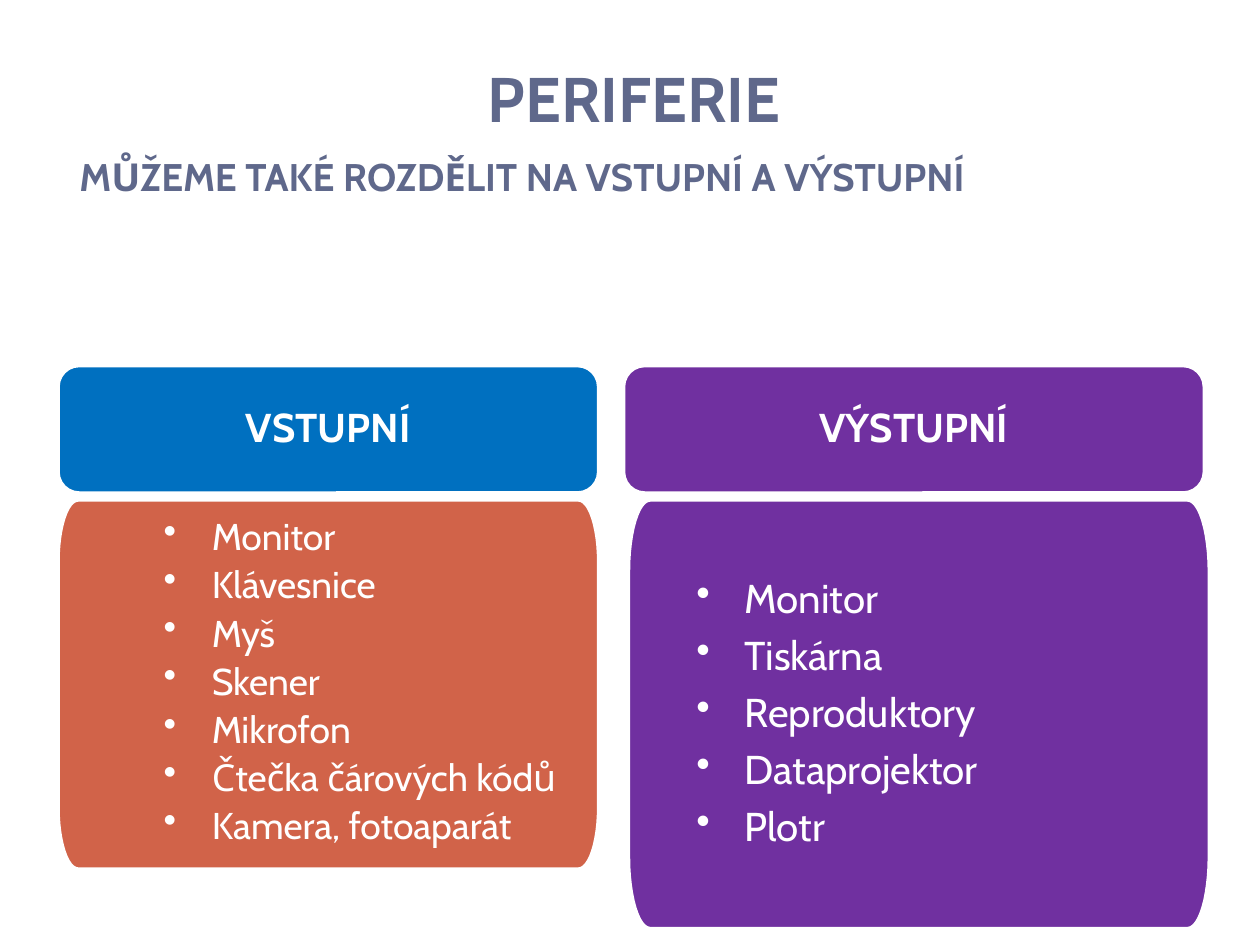
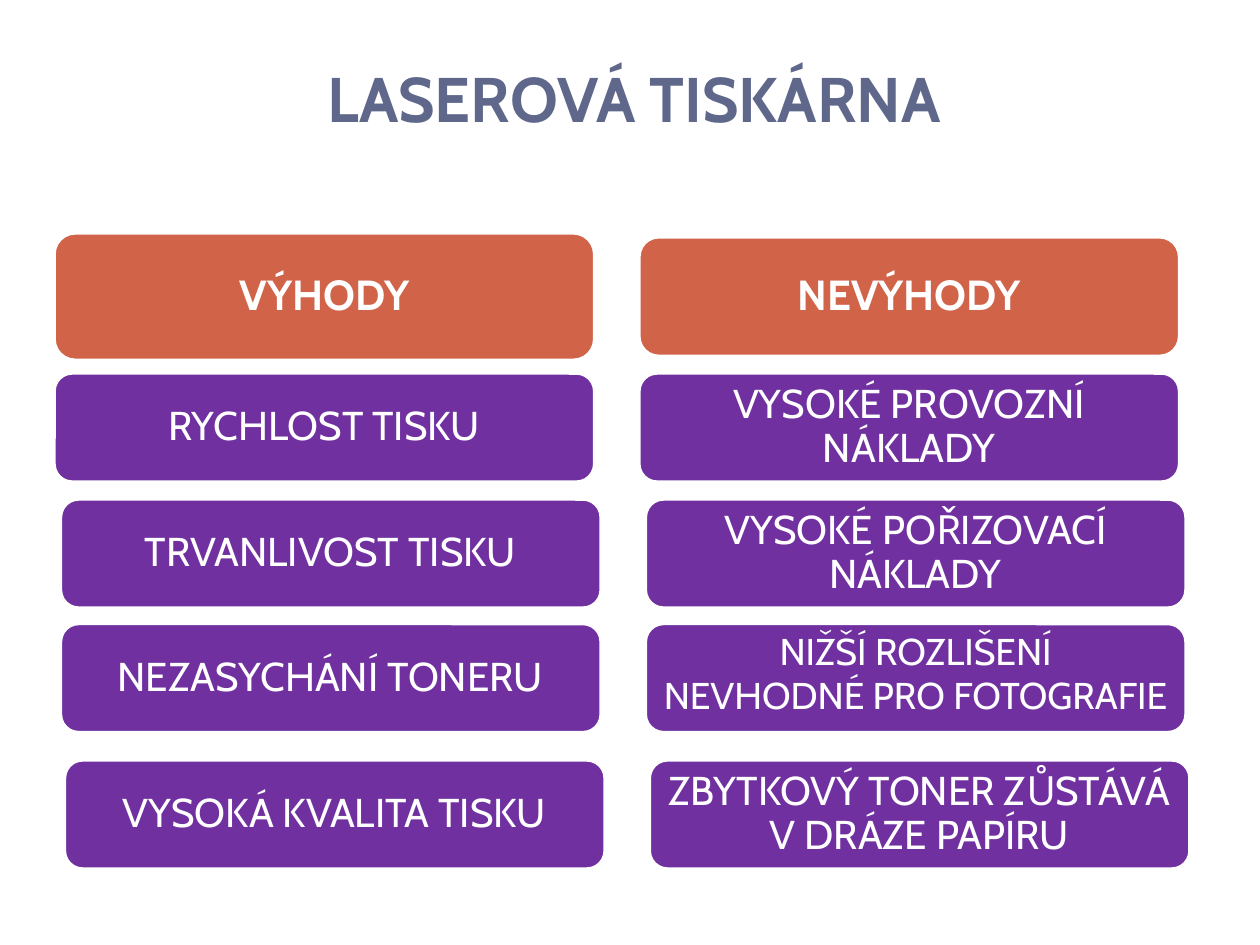
import math
from lxml import etree
from pptx import Presentation
from pptx import util as u
from pptx.dml.color import RGBColor
from pptx.enum import shapes, text
from pptx.oxml.ns import qn

Cm, Pt = u.Cm, u.Pt
FONT = "Cabin"
HUES = {"title": "5F688B", "white": "FFFFFF", "violet": "7030A0",
        "blue": "0070C0", "rust": "D16349"}
AFTER = 0.335  # space after a paragraph, as a share of its text size

KINDS = {
    "title": "PERIFERIE",
    "lead": "MŮŽEME TAKÉ ROZDĚLIT NA VSTUPNÍ A VÝSTUPNÍ",
    "cols": [
        {"head": "VSTUPNÍ", "hue": "blue", "left": 1.17, "width": 10.9,
         "list": {"hue": "rust", "left": 1.17, "high": 7.44, "size": 21.3,
                  "space": 0.8, "indent": 2.74},
         "items": ["Monitor", "Klávesnice", "Myš", "Skener", "Mikrofon",
                   "Čtečka čárových kódů", "Kamera, fotoaparát"]},
        {"head": "VÝSTUPNÍ", "hue": "violet", "left": 12.57, "width": 11.71,
         "list": {"hue": "violet", "left": 12.67, "high": 8.64, "size": 23,
                  "space": 0.9, "indent": 1.98},
         "items": ["Monitor", "Tiskárna", "Reproduktory", "Dataprojektor",
                   "Plotr"]},
    ],
}
LASER = {
    "title": "LASEROVÁ TISKÁRNA",
    "heads": [("VÝHODY", 2.57), ("NEVÝHODY", 2.41)],
    # left, top, advantage, drawback
    "rows": [
        (1.09, 7.52, "RYCHLOST TISKU", ["VYSOKÉ PROVOZNÍ NÁKLADY"]),
        (1.22, 10.06, "TRVANLIVOST TISKU", ["VYSOKÉ POŘIZOVACÍ NÁKLADY"]),
        (1.22, 12.57, "NEZASYCHÁNÍ TONERU",
         ["NIŽŠÍ ROZLIŠENÍ", "NEVHODNÉ PRO FOTOGRAFIE"]),
        (1.3, 15.32, "VYSOKÁ KVALITA TISKU",
         ["ZBYTKOVÝ TONER ZŮSTÁVÁ V DRÁZE PAPÍRU"]),
    ],
}
HEAD_TOP, HEAD_HIGH, LIST_TOP = 7.37, 2.57, 10.08
LASER_MID, CARD_WIDE, CARD_HIGH, COL_STEP = 5.98, 10.9, 2.2, 11.79


def rgb(hue):
    return RGBColor.from_string(HUES[hue])


def write(frame, lines, size, hue="white", bold=False, space=None, after=0,
          align=text.PP_ALIGN.CENTER):
    frame.word_wrap = True
    for num, line in enumerate(lines):
        para = frame.add_paragraph() if num else frame.paragraphs[0]
        para.alignment = align
        para.line_spacing = space
        para.space_after = Pt(round(after * size, 1))
        run = para.add_run()
        run.text = line
        font = run.font
        font.name, font.size, font.bold = FONT, Pt(size), bold
        font.color.rgb = rgb(hue)


def dent(para, left, hang=0, mark=None):
    """Set the indent of a paragraph and, if given, its bullet."""
    props = para._p.get_or_add_pPr()
    props.set("marL", str(Cm(left)))
    props.set("indent", str(Cm(hang)))
    if mark:
        etree.SubElement(props, qn("a:buChar")).set("char", mark)


def paint(shape, hue, side, edge):
    shape.shadow.inherit = False
    shape.fill.solid()
    shape.fill.fore_color.rgb = rgb(hue)
    shape.line.color.rgb = rgb("white")
    shape.line.width = Pt(2)
    frame = shape.text_frame
    frame.vertical_anchor = text.MSO_ANCHOR.MIDDLE
    frame.margin_left = frame.margin_right = Cm(side)
    frame.margin_top = frame.margin_bottom = Cm(edge)
    return frame


def card(slide, left, top, wide, high, hue, lines, size=23, **style):
    shape = slide.shapes.add_shape(
        shapes.MSO_SHAPE.ROUNDED_RECTANGLE,
        Cm(left), Cm(top), Cm(wide), Cm(high))
    shape.adjustments[0] = 1 / 6
    write(paint(shape, hue, 0.23, 0.15), lines, size, **style)


def panel(slide, wide, items, hue, left, high, size, space, indent):
    """Draw a bulleted list on a box with tall elliptic corners."""
    rx, ry = wide / 27, high / 6
    mids = [(left + wide - rx, LIST_TOP + high - ry),
            (left + rx, LIST_TOP + high - ry),
            (left + rx, LIST_TOP + ry),
            (left + wide - rx, LIST_TOP + ry)]
    dots = []
    for turn, (x, y) in enumerate(mids):
        for step in range(13):
            angle = math.pi / 2 * (turn + step / 12)
            dots.append((Cm(x + rx * math.cos(angle)),
                         Cm(y + ry * math.sin(angle))))
    pen = slide.shapes.build_freeform(*dots[0])
    pen.add_line_segments(dots[1:], close=True)
    frame = paint(pen.convert_to_shape(), hue, 0.36, 0.25)
    write(frame, items, size, space=space, after=AFTER,
          align=text.PP_ALIGN.LEFT)
    for para in frame.paragraphs:
        dent(para, indent, -0.97, "•")


def label(slide, left, top, wide, high):
    box = slide.shapes.add_textbox(Cm(left), Cm(top), Cm(wide), Cm(high))
    return box.text_frame


def start(deck, title):
    slide = deck.slides.add_slide(deck.slide_layouts[6])
    frame = label(slide, 1.09, 1.12, 23.39, 1.73)
    frame.vertical_anchor = text.MSO_ANCHOR.BOTTOM
    write(frame, [title], 36, "title", True, Pt(20))
    return slide


def kinds(deck):
    slide = start(deck, KINDS["title"])
    frame = label(slide, 1.12, 2.97, 23.06, 1.19)
    write(frame, [KINDS["lead"]], 22, "title", True,
          align=text.PP_ALIGN.LEFT)
    frame.paragraphs[0].space_before = Pt(6)
    dent(frame.paragraphs[0], 0.23)
    for col in KINDS["cols"]:
        card(slide, col["left"], HEAD_TOP, col["width"], HEAD_HIGH,
             col["hue"], [col["head"]], bold=True, space=0.9)
        panel(slide, col["width"], col["items"], **col["list"])


def laser(deck):
    slide = start(deck, LASER["title"])
    for num, (head, high) in enumerate(LASER["heads"]):
        card(slide, 1.09 + num * COL_STEP, LASER_MID - high / 2, CARD_WIDE,
             high, "rust", [head], 24, bold=True, space=0.9)
    for left, top, good, bad in LASER["rows"]:
        for num, lines in enumerate(([good], bad)):
            size, space = (21.3, 0.7) if len(lines) > 1 else (23, 0.9)
            card(slide, left + num * COL_STEP, top, CARD_WIDE, CARD_HIGH,
                 "violet", lines, size, space=space, after=AFTER)


def main():
    deck = Presentation()
    deck.slide_width, deck.slide_height = Cm(25.4), Cm(19.05)
    kinds(deck)
    laser(deck)
    deck.save("out.pptx")


if __name__ == "__main__":
    main()
